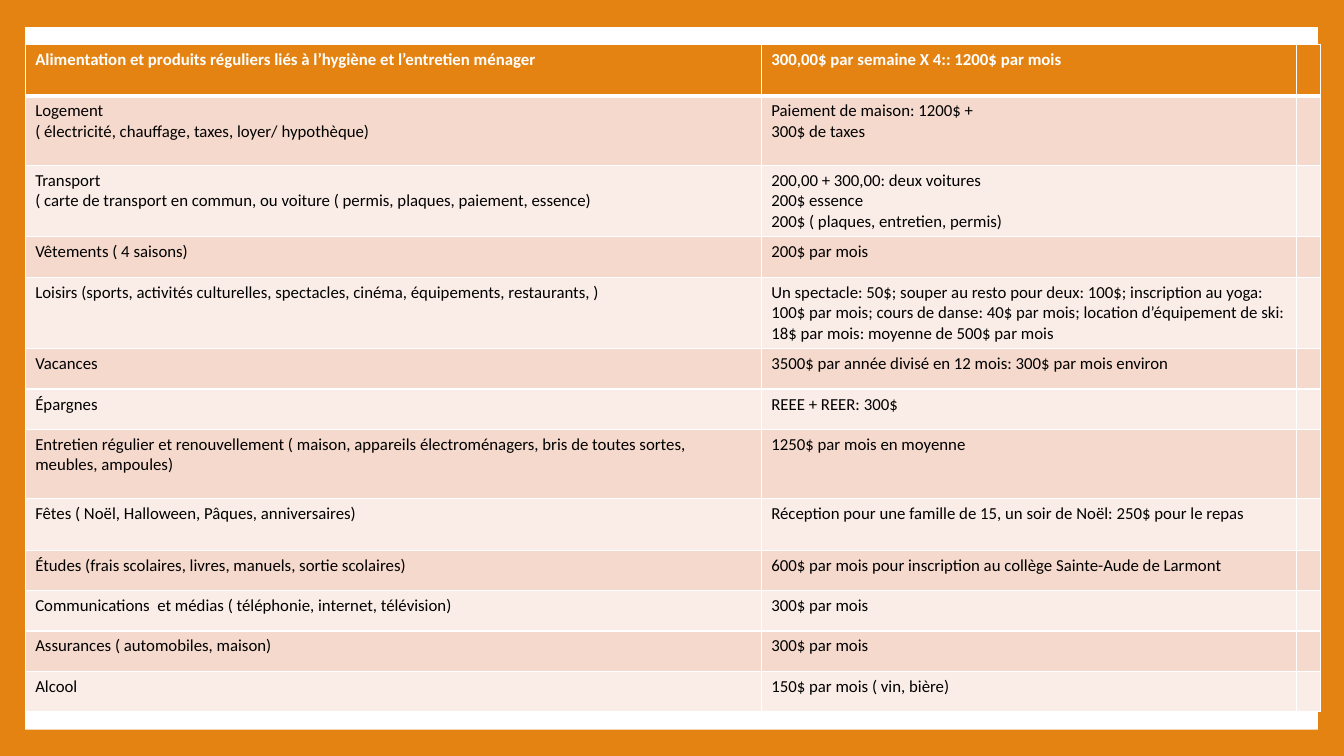
from lxml.etree import SubElement
from pptx import Presentation
from pptx.dml.color import RGBColor
from pptx.enum.shapes import MSO_SHAPE
from pptx.oxml.ns import qn
from pptx.util import Inches, Pt

ORANGE, WHITE, BLACK = "E48312", "FFFFFF", "000000"
BANDS = ["FAEDE7", "F5D9CC"]
COLUMN_WIDTHS = [7.3, 5.31, 0.23]
BUDGET = [
    (0.51, "Alimentation et produits réguliers liés à l’hygiène et l’entretien ménager",
     "300,00$ par semaine X 4:: 1200$ par mois"),
    (0.69, "Logement\n( électricité, chauffage, taxes, loyer/ hypothèque)",
     "Paiement de maison: 1200$ +\n300$ de taxes"),
    (0.7, "Transport\n( carte de transport en commun, ou voiture ( permis, plaques, paiement, essence)",
     "200,00 + 300,00: deux voitures\n200$ essence\n200$ ( plaques, entretien, permis)"),
    (0.4, "Vêtements ( 4 saisons)", "200$ par mois"),
    (0.7, "Loisirs (sports, activités culturelles, spectacles, cinéma, équipements, restaurants, )",
     "Un spectacle: 50$; souper au resto pour deux: 100$; inscription au yoga: "
     "100$ par mois; cours de danse: 40$ par mois; location d’équipement de ski: "
     "18$ par mois: moyenne de 500$ par mois"),
    (0.4, "Vacances", "3500$ par année divisé en 12 mois: 300$ par mois environ"),
    (0.4, "Épargnes", "REEE + REER: 300$"),
    (0.69, "Entretien régulier et renouvellement ( maison, appareils électroménagers, "
     "bris de toutes sortes, meubles, ampoules)", "1250$ par mois en moyenne"),
    (0.51, "Fêtes ( Noël, Halloween, Pâques, anniversaires)",
     "Réception pour une famille de 15, un soir de Noël: 250$ pour le repas"),
    (0.4, "Études (frais scolaires, livres, manuels, sortie scolaires)",
     "600$ par mois pour inscription au collège Sainte-Aude de Larmont"),
    (0.4, "Communications  et médias ( téléphonie, internet, télévision)", "300$ par mois"),
    (0.4, "Assurances ( automobiles, maison)", "300$ par mois"),
    (0.4, "Alcool", "150$ par mois ( vin, bière)"),
]


def color(code):
    return RGBColor.from_string(code)


class BudgetSlide:
    font_name = "Calibri"
    font_size = Pt(12)

    def __init__(self, presentation):
        self.slide = presentation.slides.add_slide(presentation.slide_layouts[6])

    def paint(self, fill, code):
        fill.solid()
        fill.fore_color.rgb = color(code)

    def background(self, code):
        self.paint(self.slide.background.fill, code)

    def panel(self, left, top, width, height, code):
        panel = self.slide.shapes.add_shape(
            MSO_SHAPE.RECTANGLE, Inches(left), Inches(top), Inches(width), Inches(height))
        panel.shadow.inherit = False
        self.paint(panel.fill, code)
        panel.line.fill.background()

    def border(self, cell, side, points):
        line = SubElement(cell._tc.get_or_add_tcPr(), qn(f"a:ln{side}"), w=str(Pt(points)))
        SubElement(SubElement(line, qn("a:solidFill")), qn("a:srgbClr"), val=WHITE)

    def cell(self, cell, text, row):
        header = row == 0
        widths = {"L": 1, "R": 1, "T": 3 if row == 1 else 1, "B": 3 if header else 1}
        for side, points in widths.items():
            self.border(cell, side, points)
        self.paint(cell.fill, ORANGE if header else BANDS[row % 2])
        cell.text = text
        for paragraph in cell.text_frame.paragraphs:
            font = paragraph.font
            font.name, font.size, font.bold = self.font_name, self.font_size, header
            font.color.rgb = color(WHITE if header else BLACK)

    def table(self, left, top, widths, entries):
        height = sum(entry[0] for entry in entries)
        table = self.slide.shapes.add_table(
            len(entries), len(widths), Inches(left), Inches(top),
            Inches(sum(widths)), Inches(height)).table
        table.first_row = table.horz_banding = False
        for column, width in zip(table.columns, widths):
            column.width = Inches(width)
        for index, (row_height, expense, amount) in enumerate(entries):
            table.rows[index].height = Inches(row_height)
            for column, text in enumerate([expense, amount, ""]):
                self.cell(table.cell(index, column), text, index)


def main():
    presentation = Presentation()
    presentation.slide_width = Inches(13.33)
    presentation.slide_height = Inches(7.5)
    budget = BudgetSlide(presentation)
    budget.background(ORANGE)
    budget.panel(0.25, 0.27, 12.82, 6.97, WHITE)
    budget.table(0.25, 0.44, COLUMN_WIDTHS, BUDGET)
    presentation.save("out.pptx")


if __name__ == "__main__":
    main()
